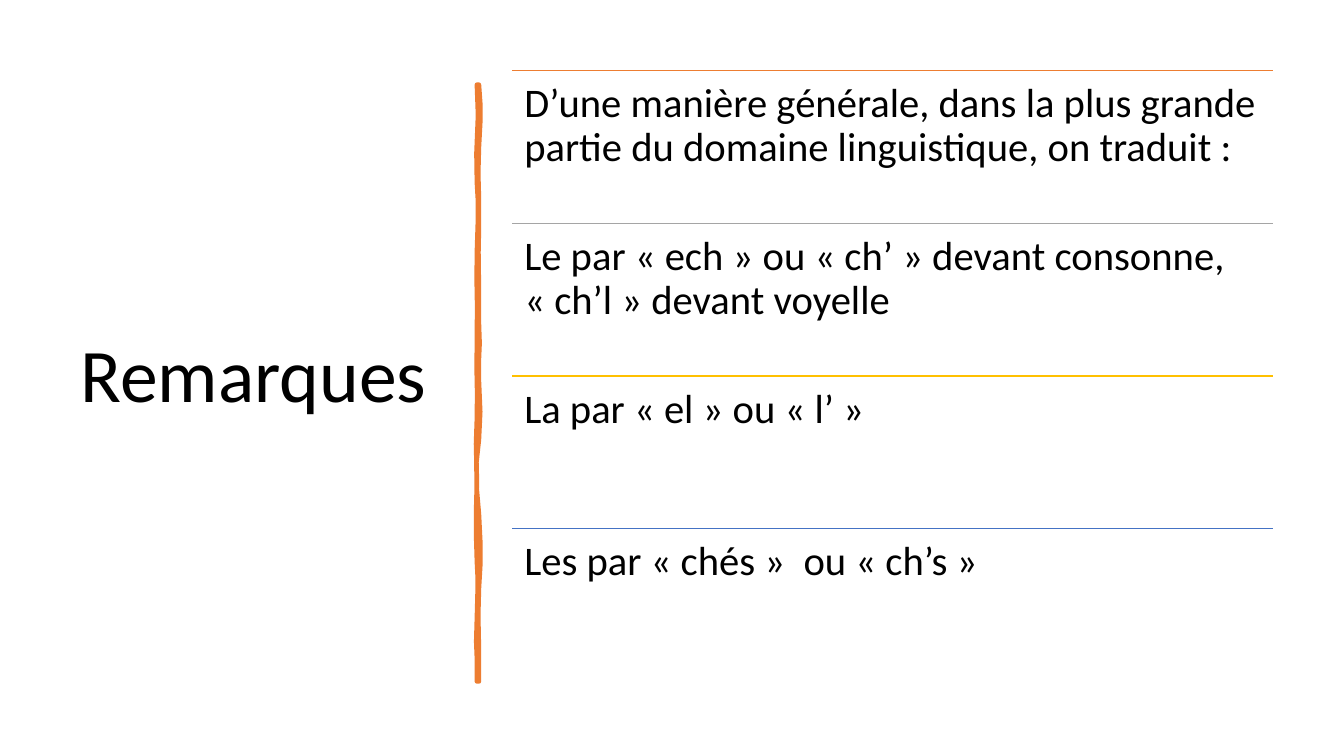
from dataclasses import dataclass

import pptx
import pptx.dml.color
import pptx.enum.shapes
import pptx.enum.text
import pptx.oxml
import pptx.oxml.ns
import pptx.util

Inches = pptx.util.Inches
Pt = pptx.util.Pt
RGB = pptx.dml.color.RGBColor.from_string

Point = tuple[float, float]
Curve = tuple[float, float, float, float, float, float]

NBSP = chr(160)


def quoted(text: str) -> str:
    """Set the text in French quotation marks with non-breaking spaces."""
    return f"«{NBSP}{text}{NBSP}»"


@dataclass(frozen=True)
class Theme:
    font: str = "Calibri"
    text: str = "000000"
    accent: str = "ED7D31"
    title_size: float = 54
    body_size: float = 29
    rule_width: float = 1
    brush_width: float = 3.25


@dataclass(frozen=True)
class Remark:
    text: str
    color: str


@dataclass(frozen=True)
class Box:
    left: float
    top: float
    width: float
    height: float


THEME = Theme()
TITLE = Box(0.7, 0.69, 3.74, 6.11)
REMARKS_AREA = Box(5.08, 0.7, 7.55, 6.06)
REMARKS = [
    Remark("D’une manière générale, dans la plus grande partie du domaine "
           "linguistique, on traduit :", THEME.accent),
    Remark(f"Le par {quoted('ech')} ou {quoted('ch’')} devant consonne, "
           f"{quoted('ch’l')} devant voyelle", "A5A5A5"),
    Remark(f"La par {quoted('el')} ou {quoted('l’')}", "FFC000"),
    Remark(f"Les par {quoted('chés')} {NBSP}ou {quoted('ch’s')}", "4472C4"),
]

# Each curve holds two control points and an end point, in inches.
BRUSH_START: Point = (4.75, 0.84)
BRUSH_CURVES: list[Curve] = [
    (4.77, 1.02, 4.77, 1.19, 4.75, 1.46),
    (4.73, 1.73, 4.76, 1.95, 4.75, 2.26),
    (4.74, 2.57, 4.75, 2.62, 4.75, 2.94),
    (4.74, 3.25, 4.77, 3.42, 4.75, 3.56),
    (4.73, 3.7, 4.79, 4.14, 4.75, 4.36),
    (4.71, 4.57, 4.72, 4.84, 4.75, 5.1),
    (4.77, 5.36, 4.77, 5.64, 4.75, 5.84),
    (4.73, 6.03, 4.76, 6.5, 4.75, 6.76),
    (4.74, 6.76, 4.73, 6.76, 4.73, 6.76),
    (4.74, 6.46, 4.71, 6.44, 4.73, 6.13),
    (4.74, 5.83, 4.74, 5.7, 4.73, 5.57),
    (4.72, 5.44, 4.72, 4.95, 4.73, 4.77),
    (4.73, 4.59, 4.71, 4.45, 4.73, 4.15),
    (4.74, 3.86, 4.72, 3.73, 4.73, 3.35),
    (4.74, 2.98, 4.72, 2.81, 4.73, 2.5),
    (4.74, 2.18, 4.75, 2, 4.73, 1.81),
    (4.7, 1.63, 4.77, 1.04, 4.73, 0.84),
]


def flatten(start: Point, curves: list[Curve], steps: int = 3) -> list[Point]:
    """Turn a chain of cubic Bézier curves into points along it."""
    points = []
    x0, y0 = start
    for x1, y1, x2, y2, x3, y3 in curves:
        for i in range(1, steps + 1):
            t = i / steps
            u = 1 - t
            a, b, c, d = u**3, 3 * u * u * t, 3 * u * t * t, t**3
            points.append((a * x0 + b * x1 + c * x2 + d * x3,
                           a * y0 + b * y1 + c * y2 + d * y3))
        x0, y0 = x3, y3
    return points


def add_brush_stroke(slide: pptx.slide.Slide) -> None:
    x, y = BRUSH_START
    fb = slide.shapes.build_freeform(Inches(x), Inches(y))
    fb.add_line_segments([(Inches(px), Inches(py))
                          for px, py in flatten(BRUSH_START, BRUSH_CURVES)])
    sp = fb.convert_to_shape()
    sp.shadow.inherit = False
    sp.fill.solid()
    sp.fill.fore_color.rgb = RGB(THEME.accent)
    sp.line.color.rgb = RGB(THEME.accent)
    sp.line.width = Pt(THEME.brush_width)


def add_text(slide: pptx.slide.Slide, box: Box, text: str, size: float,
             inset: Point, anchor: pptx.enum.text.MSO_ANCHOR) -> None:
    sp = slide.shapes.add_textbox(Inches(box.left), Inches(box.top),
                                  Inches(box.width), Inches(box.height))
    tf = sp.text_frame
    tf.word_wrap = True
    tf.vertical_anchor = anchor
    tf.margin_left = tf.margin_right = Inches(inset[0])
    tf.margin_top = tf.margin_bottom = Inches(inset[1])
    p = tf.paragraphs[0]
    p.text = text
    p.line_spacing = 0.9
    p.font.name = THEME.font
    p.font.size = Pt(size)
    p.font.color.rgb = RGB(THEME.text)


def add_rule(slide: pptx.slide.Slide, box: Box, color: str) -> None:
    """Draw a line along the top edge of the box."""
    line = slide.shapes.add_connector(
        pptx.enum.shapes.MSO_CONNECTOR.STRAIGHT, Inches(box.left), Inches(box.top),
        Inches(box.left + box.width), Inches(box.top))
    line.line.color.rgb = RGB(color)
    line.line.width = Pt(THEME.rule_width)
    sp_pr = line._element.spPr
    sp_pr.append(sp_pr.makeelement(pptx.oxml.ns.qn("a:effectLst"), {}))


def main() -> None:
    prs = pptx.Presentation()
    prs.slide_width, prs.slide_height = Inches(13.33), Inches(7.5)
    slide = prs.slides.add_slide(prs.slide_layouts[6])
    anchors = pptx.enum.text.MSO_ANCHOR

    add_text(slide, TITLE, "Remarques", THEME.title_size, (0.1, 0.05), anchors.MIDDLE)
    add_brush_stroke(slide)

    area = REMARKS_AREA
    row_height = area.height / len(REMARKS)
    for i, remark in enumerate(REMARKS):
        row = Box(area.left, area.top + i * row_height, area.width, row_height)
        add_rule(slide, row, remark.color)
        add_text(slide, row, remark.text, THEME.body_size, (0.12, 0.12), anchors.TOP)

    prs.save("out.pptx")


if __name__ == "__main__":
    main()
